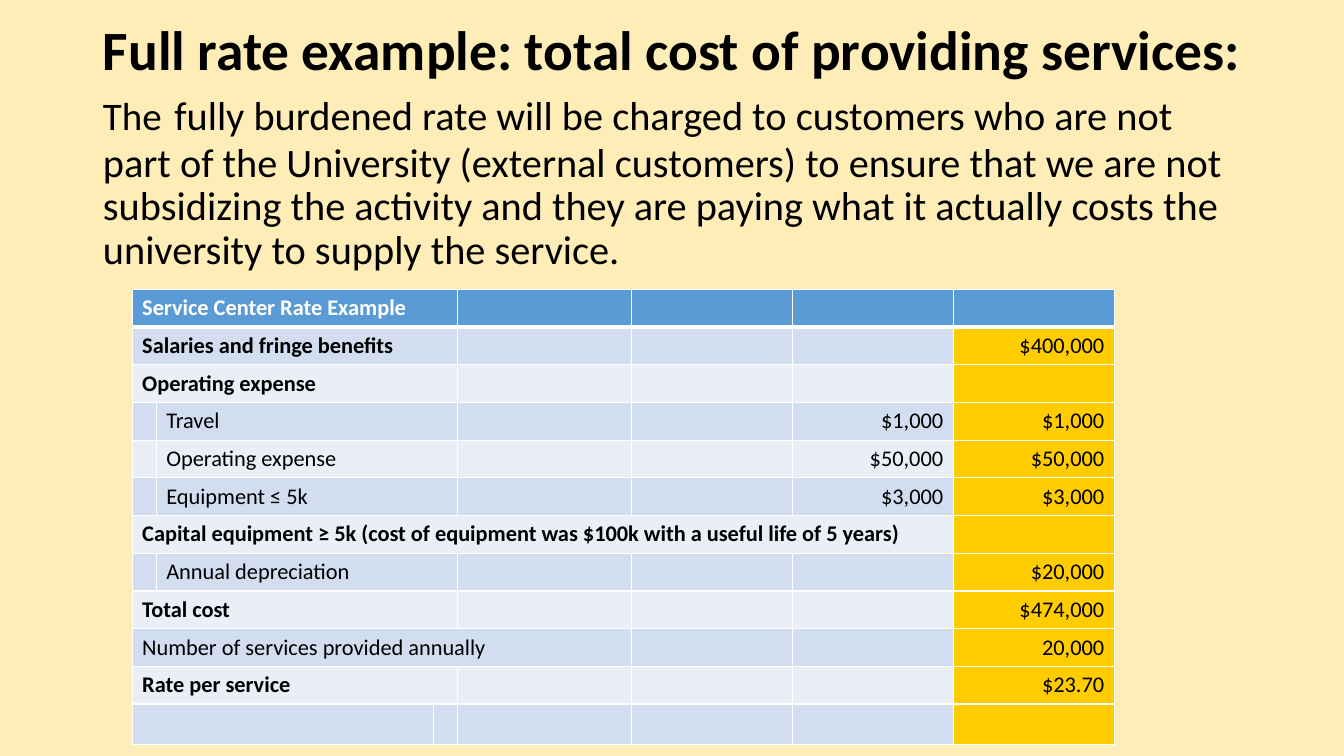
from dataclasses import dataclass
from lxml.etree import SubElement as Sub
from pptx import Presentation
from pptx.dml.color import RGBColor as Rgb
from pptx.enum.text import MSO_ANCHOR as Anchor, MSO_AUTO_SIZE as Fit, PP_ALIGN as Align
from pptx.oxml.ns import qn
from pptx.util import Cm, Pt


@dataclass(frozen=True)
class Theme:
    """Colours and type sizes of the slide."""
    font: str = "Calibri"
    back: str = "FFEDB8"
    ink: str = "000000"
    white: str = "FFFFFF"
    head: str = "5B9BD5"
    bands: tuple = ("EAEFF7", "D2DEEF")
    total: str = "FFCC00"
    title: float = 39.6
    lead: float = 27.9
    text: float = 28.8
    cell: float = 16
    blank: float = 18


THEME = Theme()
WIDTHS = (0.58, 6.99, 0.58, 4.37, 4.06, 4.06, 4.06)
ROW = 0.95

# Each row: first column, columns spanned, bold, label, amount, total
ROWS = (
    (0, 3, True, "Service Center Rate Example", "", ""),
    (0, 3, True, "Salaries and fringe benefits", "", "$400,000"),
    (0, 3, True, "Operating expense", "", ""),
    (1, 2, False, "Travel", "$1,000", "$1,000"),
    (1, 2, False, "Operating expense", "$50,000", "$50,000"),
    (1, 2, False, "Equipment ≤ 5k", "$3,000", "$3,000"),
    (0, 6, True, "Capital equipment ≥ 5k (cost of equipment was $100k "
     "with a useful life of 5 years)", "", ""),
    (1, 2, False, "Annual depreciation", "", "$20,000"),
    (0, 3, True, "Total cost", "", "$474,000"),
    (0, 4, False, "Number of services provided annually", "", "20,000"),
    (0, 3, True, "Rate per service", "", "$23.70"),
    (0, 2, False, "", "", ""),
)
HEAD = "Full rate example: total cost of providing services:"
BODY = ("fully burdened rate will be charged to customers who are not part of the "
        "University (external customers) to ensure that we are not subsidizing the "
        "activity and they are paying what it actually costs the university to "
        "supply the service.")


def style(para, color, bold=None, size=None):
    """Set the font of a paragraph."""
    font = para.font
    font.name, font.bold = THEME.font, bold
    font.color.rgb = Rgb.from_string(color)
    if size:
        font.size = Pt(size)


def add_run(para, text, size, bold=False):
    """Add a run with its own size and weight."""
    run = para.add_run()
    run.text = text
    run.font.size, run.font.bold = Pt(size), bold


def add_title(slide):
    """Fill the title with its heading and its explanation."""
    title = slide.shapes.title
    title.left, title.top = Cm(2.34), Cm(1.02)
    title.width, title.height = Cm(29.21), Cm(5.41)
    frame = title.text_frame
    frame.word_wrap, frame.auto_size = True, Fit.NONE
    frame.vertical_anchor = Anchor.MIDDLE
    para = frame.paragraphs[0]
    para.alignment, para.line_spacing = Align.LEFT, 0.9
    style(para, THEME.ink)
    add_run(para, HEAD, THEME.title, True)
    para.add_line_break()
    add_run(para, "The", THEME.lead)
    add_run(para, " ", THEME.title)
    add_run(para, BODY, THEME.text)


def add_edges(cell, base):
    """Draw white borders, with the bottom one base points wide."""
    props = cell._tc.get_or_add_tcPr()
    fill = props[0]
    for side, width in (("L", 1), ("R", 1), ("T", 1), ("B", base)):
        line = Sub(props, qn(f"a:ln{side}"), w=str(Pt(width)))
        Sub(Sub(line, qn("a:solidFill")), qn("a:srgbClr"), val=THEME.white)
        fill.addprevious(line)


def fill_cell(cell, text, fill, color, bold, size, align, base):
    """Write and format one table cell."""
    cell.fill.solid()
    cell.fill.fore_color.rgb = Rgb.from_string(fill)
    add_edges(cell, base)
    cell.text = text
    para = cell.text_frame.paragraphs[0]
    para.alignment = align
    style(para, color, bold, size)


def fill_row(table, index, row):
    """Fill one table row and merge its label cells."""
    first, span, bold, label, amount, total = row
    top = index == 0
    band = THEME.head if top else THEME.bands[index % 2]
    color = THEME.white if top else THEME.ink
    size = THEME.cell if label else THEME.blank
    last = len(WIDTHS) - 1
    texts = {first: label, last - 1: amount, last: total}
    for col in range(len(WIDTHS)):
        fill = THEME.total if col == last and not top else band
        align = Align.RIGHT if col >= last - 1 else Align.LEFT
        fill_cell(table.cell(index, col), texts.get(col, ""), fill, color,
                  bold and col == first, size, align, 3 if top else 1)
    table.cell(index, first).merge(table.cell(index, first + span - 1))


def add_rates(slide):
    """Add the table of costs and the rate."""
    frame = slide.shapes.add_table(len(ROWS), len(WIDTHS), Cm(3.33), Cm(7.29),
                                   Cm(sum(WIDTHS)), Cm(ROW * len(ROWS)))
    table = frame.table
    table.horz_banding = False
    for col, width in zip(table.columns, WIDTHS):
        col.width = Cm(width)
    for index, row in enumerate(ROWS):
        table.rows[index].height = Cm(ROW)
        fill_row(table, index, row)


def main():
    """Build the slide and save it."""
    deck = Presentation()
    deck.slide_width, deck.slide_height = Cm(33.87), Cm(19.05)
    slide = deck.slides.add_slide(deck.slide_layouts[5])
    fill = slide.background.fill
    fill.solid()
    fill.fore_color.rgb = Rgb.from_string(THEME.back)
    add_title(slide)
    add_rates(slide)
    deck.save("out.pptx")


if __name__ == "__main__":
    main()
